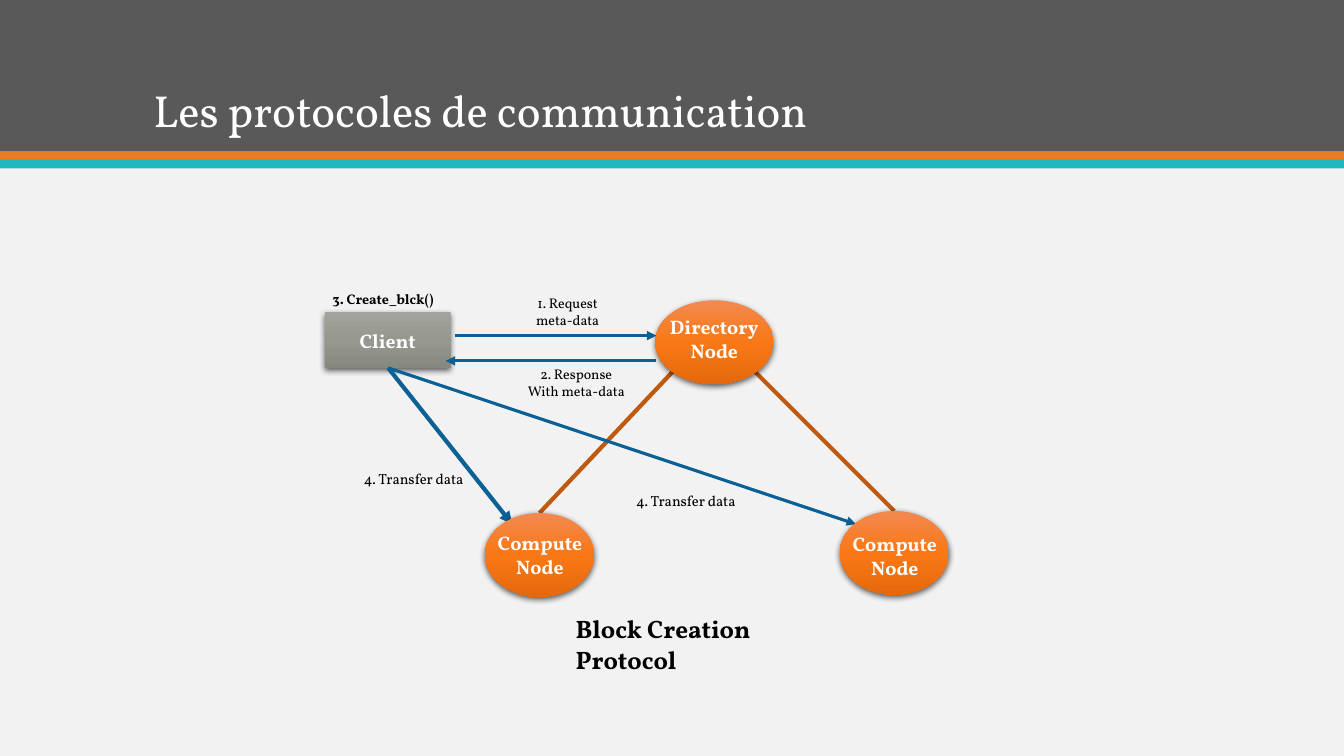
from pptx import Presentation
from pptx.dml.color import RGBColor
from pptx.enum.shapes import MSO_CONNECTOR, MSO_SHAPE
from pptx.enum.text import MSO_ANCHOR, MSO_AUTO_SIZE, PP_ALIGN
from pptx.oxml import parse_xml
from pptx.oxml.ns import nsdecls
from pptx.util import Pt

PX = 9144  # 100 px to the inch
FONT = "Vollkorn"
TITLE_ONLY = 5

STRAIGHT = MSO_CONNECTOR.STRAIGHT
RECTANGLE, OVAL = MSO_SHAPE.RECTANGLE, MSO_SHAPE.OVAL
LEFT, CENTER = PP_ALIGN.LEFT, PP_ALIGN.CENTER
MIDDLE, BOTTOM = MSO_ANCHOR.MIDDLE, MSO_ANCHOR.BOTTOM
NO_AUTOFIT = MSO_AUTO_SIZE.NONE

BACKGROUND = RGBColor(0xF2, 0xF2, 0xF2)
HEADER = RGBColor(0x59, 0x59, 0x59)
ORANGE = RGBColor(0xEF, 0x79, 0x20)
TURQUOISE = RGBColor(0x1E, 0xB8, 0xC1)
BROWN = RGBColor(0xBE, 0x59, 0x0E)
BLUE = RGBColor(0x0B, 0x61, 0x96)
BLACK = RGBColor(0x00, 0x00, 0x00)
WHITE = RGBColor(0xFF, 0xFF, 0xFF)
GREY_GRADIENT = (RGBColor(0xA2, 0xA3, 0x9C), RGBColor(0x96, 0x98, 0x90),
                 RGBColor(0x86, 0x88, 0x7F))
ORANGE_GRADIENT = (RGBColor(0xF3, 0x89, 0x50), RGBColor(0xF9, 0x78, 0x16),
                   RGBColor(0xE5, 0x69, 0x0C))


def emu(*lengths):
    return [length * PX for length in lengths]


def write(shape, text, size, color=BLACK, bold=False, align=LEFT):
    frame = shape.text_frame
    frame.text = text
    for paragraph in frame.paragraphs:
        paragraph.alignment = align
        for run in paragraph.runs:
            font = run.font
            font.name, font.size, font.bold = FONT, Pt(size), bold
            font.color.rgb = color


def add_label(shapes, box, text, size, wrap=False, **style):
    label = shapes.add_textbox(*emu(*box))
    label.text_frame.word_wrap = wrap
    write(label, text, size, **style)


def add_band(slide, top, height, color):
    band = slide.shapes.add_shape(RECTANGLE, *emu(0, top, 1333, height))
    band.shadow.inherit = False
    band.fill.solid()
    band.fill.fore_color.rgb = color
    band.line.fill.background()


def add_glossy_shape(shapes, kind, box, colors):
    """Add a shape with a vertical gradient and a soft shadow below it."""
    shape = shapes.add_shape(kind, *emu(*box))
    shape.line.fill.background()
    stops = "".join(
        f'<a:gs pos="{index * 50000}"><a:srgbClr val="{color}"/></a:gs>'
        for index, color in enumerate(colors))
    gradient = parse_xml(
        f'<a:gradFill {nsdecls("a")} rotWithShape="1"><a:gsLst>{stops}</a:gsLst>'
        '<a:lin ang="5400000" scaled="0"/></a:gradFill>')
    shadow = parse_xml(
        f'<a:effectLst {nsdecls("a")}><a:outerShdw blurRad="57150" dist="19050" '
        'dir="5400000" algn="ctr" rotWithShape="0"><a:srgbClr val="000000">'
        '<a:alpha val="63000"/></a:srgbClr></a:outerShdw></a:effectLst>')
    properties = shape._element.spPr
    properties.prstGeom.addnext(gradient)
    properties.append(shadow)
    return shape


def add_node(slide, oval_box, text_box, text):
    group = slide.shapes.add_group_shape()
    add_glossy_shape(group.shapes, OVAL, oval_box, ORANGE_GRADIENT)
    add_label(group.shapes, text_box, text, 14, wrap=True,
              color=WHITE, bold=True, align=CENTER)


def add_line(slide, start, end, color, width, arrow=False):
    line = slide.shapes.add_connector(STRAIGHT, *emu(*start, *end))
    line.line.color.rgb = color
    line.line.width = Pt(width)
    if arrow:
        line.line._get_or_add_ln().append(
            parse_xml(f'<a:tailEnd {nsdecls("a")} type="triangle"/>'))
    line._element.spPr.append(parse_xml(f'<a:effectLst {nsdecls("a")}/>'))


def add_title(slide, text):
    title = slide.shapes.title
    title.left, title.top, title.width, title.height = emu(142, 28, 1167, 113)
    title.text_frame.auto_size = NO_AUTOFIT
    title.text_frame.vertical_anchor = BOTTOM
    write(title, text, 32, color=WHITE)
    title.text_frame.paragraphs[0].line_spacing = 0.9
    slide.shapes._spTree.append(title._element)  # in front of the header


def main():
    presentation = Presentation()
    presentation.slide_width, presentation.slide_height = emu(1333, 750)
    slide = presentation.slides.add_slide(presentation.slide_layouts[TITLE_ONLY])
    slide.background.fill.solid()
    slide.background.fill.fore_color.rgb = BACKGROUND

    # Header
    add_band(slide, 0, 150, HEADER)
    add_band(slide, 150, 9, ORANGE)
    add_band(slide, 158, 9, TURQUOISE)
    add_title(slide, "Les protocoles de communication")

    # Links from the directory to the compute nodes
    add_line(slide, (667, 369), (535, 509), BROWN, 3)
    add_line(slide, (749, 369), (887, 507), BROWN, 3)

    # Client
    client = add_glossy_shape(slide.shapes, RECTANGLE, (322, 310, 125, 55),
                              GREY_GRADIENT)
    client.text_frame.vertical_anchor = MIDDLE
    write(client, "Client", 14, color=WHITE, bold=True, align=CENTER)

    # Messages
    client_bottom = (385, 365)
    for start, end, width in (
            ((451, 333), (651, 333), 2.25),
            ((651, 358), (442, 358), 2.25),
            (client_bottom, (508, 520), 3),
            (client_bottom, (849, 520), 2.25)):
        add_line(slide, start, end, BLUE, width, arrow=True)

    # Nodes
    add_node(slide, (650, 298, 117, 83), (596, 308, 225, 57), "Directory\nNode")
    add_node(slide, (833, 507, 108, 83), (775, 523, 225, 57), "Compute\nNode")
    add_node(slide, (481, 509, 108, 83), (423, 522, 225, 57), "Compute\nNode")

    # Labels
    shapes = slide.shapes
    add_label(shapes, (518, 287, 90, 44), "1. Request\nmeta-data", 10, align=CENTER)
    add_label(shapes, (512, 358, 119, 44), "2. Response\nWith meta-data", 10,
              align=CENTER)
    add_label(shapes, (320, 283, 120, 27), "3. Create_blck()", 10, bold=True,
              align=CENTER)
    for left, top in ((351, 461), (621, 483)):
        add_label(shapes, (left, top, 125, 28), "4. Transfer data", 10.5)
    add_label(shapes, (561, 604, 294, 40), "Block Creation Protocol", 18,
              wrap=True, bold=True)

    presentation.save("out.pptx")


if __name__ == "__main__":
    main()
